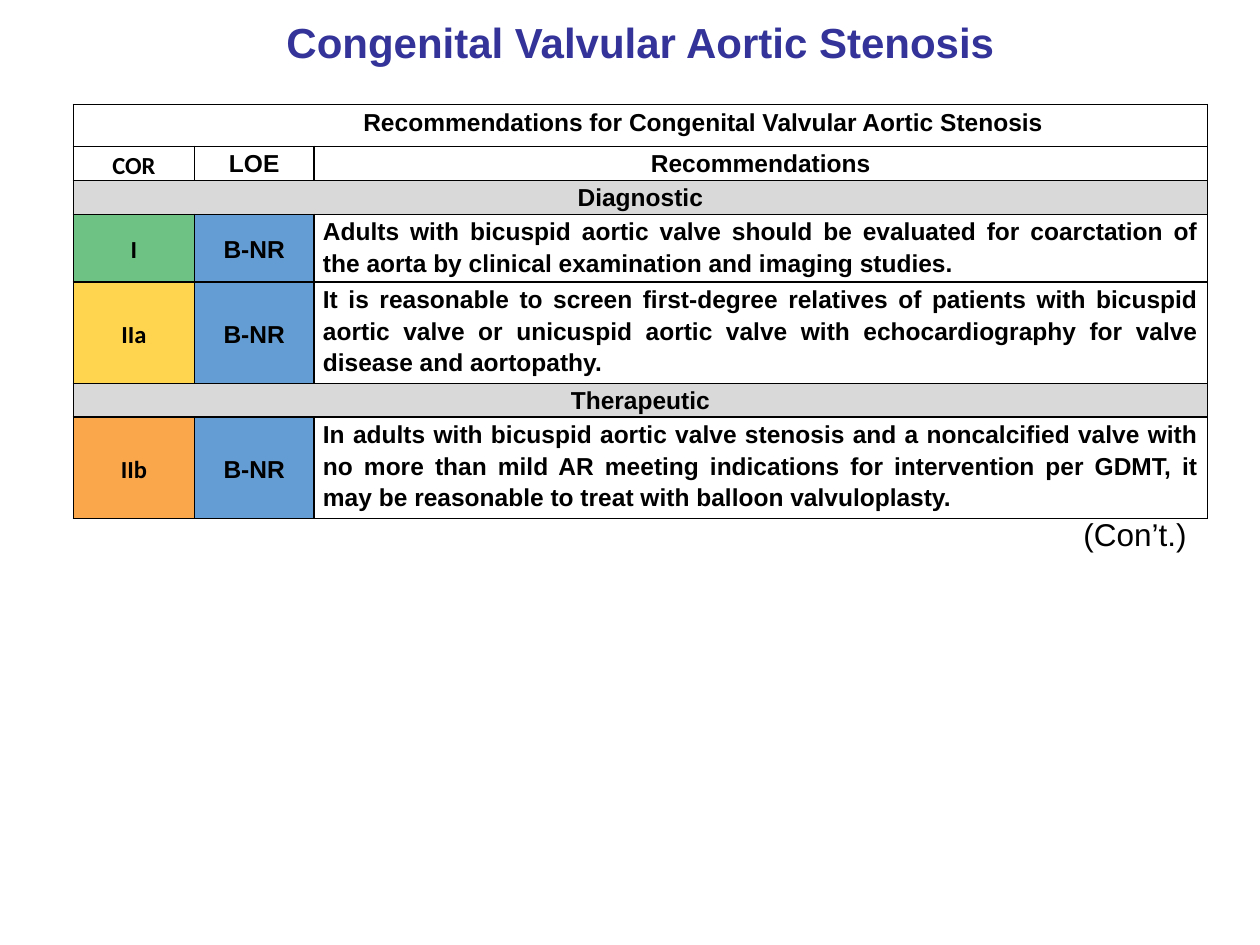
from lxml import etree
from pptx import Presentation
from pptx.dml.color import RGBColor
from pptx.enum.text import MSO_ANCHOR, PP_ALIGN
from pptx.oxml.ns import qn
from pptx.util import Cm, Pt

LEFT, CENTER, JUSTIFY = PP_ALIGN.LEFT, PP_ALIGN.CENTER, PP_ALIGN.JUSTIFY
TOP, MIDDLE = MSO_ANCHOR.TOP, MSO_ANCHOR.MIDDLE

COLORS = {
    "title": "333399",
    "text": "000000",
    "border": "000000",
    "section": "D9D9D9",
    "evidence": "649DD4",
    "I": "6EC284",
    "IIa": "FFD54F",
    "IIb": "FAA74B",
}


def write(frame, text, size=14, font="Arial", color="text", bold=True, align=CENTER, spacing=None):
    paragraph = frame.paragraphs[0]
    paragraph.alignment = align
    paragraph.line_spacing = spacing
    run = paragraph.add_run()
    run.text = text
    run.font.size = Pt(size)
    run.font.name = font
    run.font.bold = bold
    run.font.color.rgb = RGBColor.from_string(COLORS[color])


def add_borders(cell):
    properties = cell._tc.get_or_add_tcPr()
    for side in ("lnL", "lnR", "lnT", "lnB"):
        line = etree.SubElement(properties, qn(f"a:{side}"), w=str(Pt(1)))
        fill = etree.SubElement(line, qn("a:solidFill"))
        etree.SubElement(fill, qn("a:srgbClr"), val=COLORS["border"])


prs = Presentation()
prs.slide_width, prs.slide_height = Cm(25.4), Cm(19.05)
slide = prs.slides.add_slide(prs.slide_layouts[6])

# Title
title = slide.shapes.add_textbox(Cm(1.48), Cm(0.2), Cm(22.86), Cm(1.27)).text_frame
title.word_wrap = True
title.vertical_anchor = MIDDLE
write(title, "Congenital Valvular Aortic Stenosis", size=24, color="title")

# Recommendations: a single entry spans the whole row
rows = [
    (0.84, ["Recommendations for Congenital Valvular Aortic Stenosis"]),
    (0.69, ["COR", "LOE", "Recommendations"]),
    (0.64, ["Diagnostic"]),
    (1.27, ["I", "B-NR",
            "Adults with bicuspid aortic valve should be evaluated for coarctation of "
            "the aorta by clinical examination and imaging studies."]),
    (1.91, ["IIa", "B-NR",
            "It is reasonable to screen first-degree relatives of patients with bicuspid "
            "aortic valve or unicuspid aortic valve with echocardiography for valve "
            "disease and aortopathy."]),
    (0.64, ["Therapeutic"]),
    (1.91, ["IIb", "B-NR",
            "In adults with bicuspid aortic valve stenosis and a noncalcified valve with "
            "no more than mild AR meeting indications for intervention per GDMT, it "
            "may be reasonable to treat with balloon valvuloplasty."]),
]
column_widths = [2.44, 2.41, 18.01]

table = slide.shapes.add_table(
    len(rows), len(column_widths), Cm(1.48), Cm(2.11),
    Cm(sum(column_widths)), Cm(sum(height for height, _ in rows)),
).table
table.first_row = table.horz_banding = False
for column, width in zip(table.columns, column_widths):
    column.width = Cm(width)

for r, (height, texts) in enumerate(rows):
    table.rows[r].height = Cm(height)
    is_section = len(texts) == 1 and r > 0
    is_graded = texts[0] in COLORS
    if len(texts) == 1:
        table.cell(r, 0).merge(table.cell(r, 2))

    for c in range(len(column_widths)):
        cell = table.cell(r, c)
        cell.margin_left = cell.margin_right = Cm(0.18)
        cell.margin_top = cell.margin_bottom = 0
        add_borders(cell)

        if is_section:
            fill = "section"
        elif is_graded and c < 2:
            fill = (texts[0], "evidence")[c]
        else:
            fill = None
        if fill:
            cell.fill.solid()
            cell.fill.fore_color.rgb = RGBColor.from_string(COLORS[fill])
        else:
            cell.fill.background()

        if c < len(texts):
            cell.vertical_anchor = MIDDLE if is_graded and c < 2 else TOP
            write(cell.text_frame, texts[c], spacing=1.15,
                  font="Calibri" if c == 0 and len(texts) == 3 else "Arial",
                  align=JUSTIFY if is_graded and c == 2 else CENTER)

# The table heading sits right of centre
table.cell(0, 0).margin_left = Cm(2.72)

# Continuation note
note = slide.shapes.add_textbox(Cm(21.59), Cm(10.26), Cm(3.18), Cm(1.02)).text_frame
note.word_wrap = True
write(note, "(Con’t.)", size=18, bold=False, align=LEFT)

prs.save("out.pptx")
